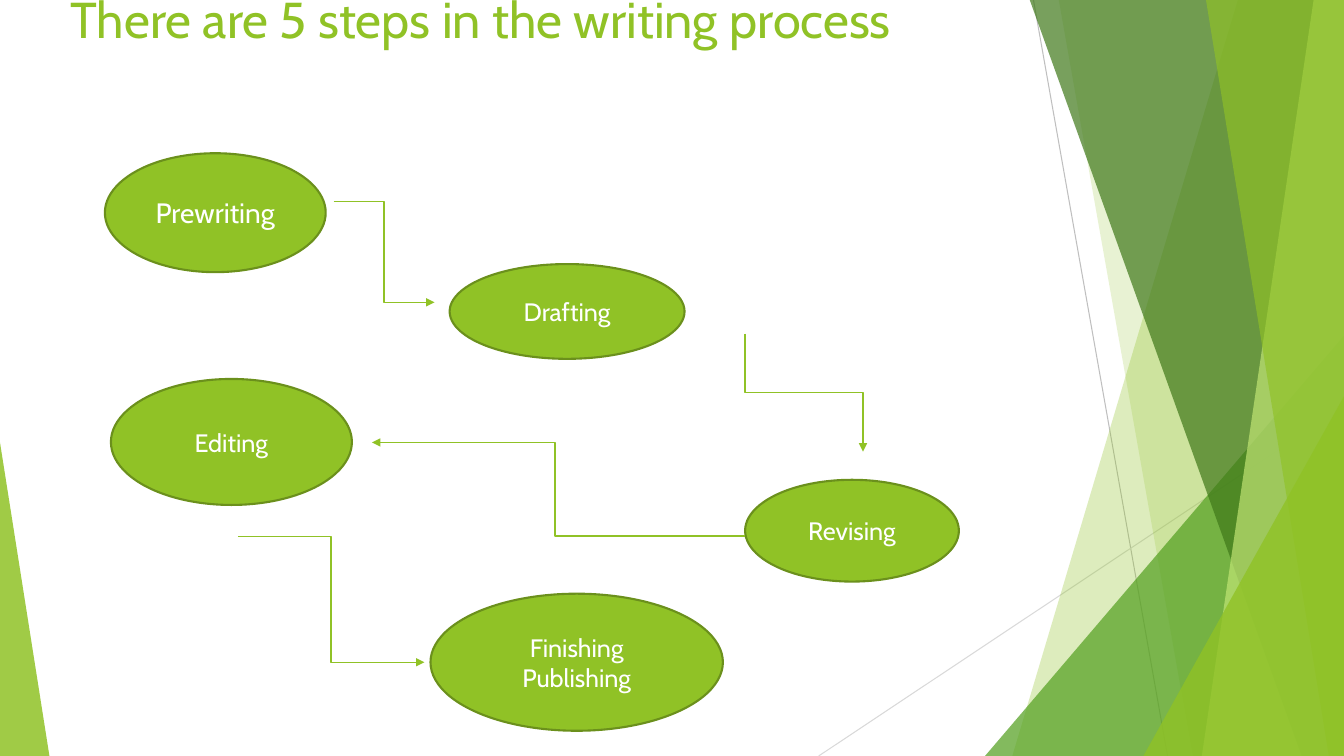
from lxml.etree import SubElement
from pptx import Presentation
from pptx.dml.color import RGBColor
from pptx.enum.shapes import MSO_CONNECTOR as Link, MSO_SHAPE as Shape
from pptx.enum.text import MSO_ANCHOR as Anchor, PP_ALIGN as Align
from pptx.oxml.ns import qn
from pptx.util import Inches, Pt

WIDTH, HEIGHT = 13.33, 7.5
FONT = "Cabin"
GREEN, DARK_GREEN, WHITE = "90C226", "6B901C", "FFFFFF"


def color(hex_code):
    return RGBColor.from_string(hex_code)


def style_text(frame, size, hex_code, align):
    frame.word_wrap = True
    for paragraph in frame.paragraphs:
        paragraph.alignment = align
        for run in paragraph.runs:
            run.font.name = FONT
            run.font.size = Pt(size)
            run.font.color.rgb = color(hex_code)


def fill_glass(shape, hex_code, opacity):
    """Fill a shape with a see-through colour and no outline."""
    shape.shadow.inherit = False
    shape.fill.solid()
    shape.fill.fore_color.rgb = color(hex_code)
    shape.line.fill.background()
    tint = shape.fill._xPr.find(qn("a:solidFill"))[0]
    SubElement(tint, qn("a:alpha")).set("val", str(opacity * 1000))


def add_link(slide, kind, start, end, hex_code, weight):
    link = slide.shapes.add_connector(kind, *map(Inches, start + end))
    link.line.color.rgb = color(hex_code)
    link.line.width = Pt(weight)
    SubElement(link._element.spPr, qn("a:effectLst"))
    return link


def add_band(slide, top_x, bottom_x, hex_code, opacity):
    """Slanted band that reaches the right edge of the slide."""
    top = -0.01
    outline = slide.shapes.build_freeform(Inches(top_x), Inches(top))
    corners = [(WIDTH, top), (WIDTH, HEIGHT), (bottom_x, HEIGHT)]
    outline.add_line_segments([(Inches(x), Inches(y)) for x, y in corners])
    fill_glass(outline.convert_to_shape(), hex_code, opacity)


def add_corner(slide, left, top, width, peak, hex_code, opacity):
    """Triangle that stands on the bottom edge of the slide."""
    corner = slide.shapes.add_shape(
        Shape.ISOSCELES_TRIANGLE, *map(Inches, (left, top, width, HEIGHT - top)))
    corner.adjustments[0] = peak
    fill_glass(corner, hex_code, opacity)


def add_backdrop(slide):
    add_link(slide, Link.STRAIGHT, (10.25, 0), (11.58, HEIGHT), "BFBFBF", 0.75)
    add_link(slide, Link.STRAIGHT, (WIDTH, 4.03), (8.12, HEIGHT), "D9D9D9", 0.75)
    add_band(slide, 12.28, 10.04, GREEN, 30)
    add_band(slide, 10.5, 11.83, GREEN, 20)
    add_corner(slide, 9.77, 3.33, 3.56, 1, "54A021", 72)
    add_band(slide, 10.21, 12.91, "3F7819", 70)
    add_band(slide, 13.03, 11.92, "C0E474", 70)
    add_band(slide, 11.96, 13.18, GREEN, 65)
    add_corner(slide, 11.34, 3.93, 1.99, 1, GREEN, 80)
    add_corner(slide, 0, 4.39, 0.49, 0, GREEN, 85)


def add_title(slide, box):
    title = slide.shapes.add_textbox(*map(Inches, box)).text_frame
    title.text = "There are 5 steps in the writing process"
    title.vertical_anchor = Anchor.TOP
    style_text(title, 36, GREEN, Align.LEFT)


def add_step(slide, name, box, size=18):
    step = slide.shapes.add_shape(Shape.OVAL, *map(Inches, box))
    step.shadow.inherit = False
    step.fill.solid()
    step.fill.fore_color.rgb = color(GREEN)
    step.line.color.rgb = color(DARK_GREEN)
    step.line.width = Pt(1.5)
    step.text_frame.text = name
    step.text_frame.vertical_anchor = Anchor.MIDDLE
    style_text(step.text_frame, size, WHITE, Align.CENTER)


def add_arrow(slide, start, end, bend=0.5, downward=False):
    """Elbow arrow; a downward one leaves vertically and spans a square."""
    arrow = add_link(slide, Link.ELBOW, start, end, GREEN, 1)
    SubElement(arrow.line._get_or_add_ln(), qn("a:tailEnd")).set("type", "triangle")
    properties = arrow._element.spPr
    if bend != 0.5:
        guides = properties.find(qn("a:prstGeom")).find(qn("a:avLst"))
        guide = SubElement(guides, qn("a:gd"))
        guide.set("name", "adj1")
        guide.set("fmla", f"val {round(bend * 100000)}")
    if downward:
        frame = properties.find(qn("a:xfrm"))
        frame.set("rot", str(270 * 60000))
        frame.set("flipH", "1")


def add_process(slide):
    add_step(slide, "Prewriting", (1.04, 1.52, 2.19, 1.18), size=20)
    add_arrow(slide, (3.31, 2), (4.31, 3))
    add_step(slide, "Drafting", (4.46, 2.62, 2.33, 0.94))
    add_arrow(slide, (7.39, 3.31), (8.56, 4.48), downward=True)
    add_step(slide, "Revising", (7.39, 4.76, 2.12, 1.01))
    add_arrow(slide, (7.39, 5.32), (3.69, 4.39), bend=0.51)
    add_step(slide, "Editing", (1.1, 3.76, 2.39, 1.25))
    add_arrow(slide, (2.36, 5.32), (4.21, 6.57))
    add_step(slide, "Finishing Publishing", (4.27, 5.89, 2.9, 1.36))


def main():
    deck = Presentation()
    deck.slide_width, deck.slide_height = Inches(WIDTH), Inches(HEIGHT)
    slide = deck.slides.add_slide(deck.slide_layouts[6])
    add_backdrop(slide)
    add_title(slide, (0.6, -0.17, 11.5, 2))
    add_process(slide)
    deck.save("out.pptx")


if __name__ == "__main__":
    main()
